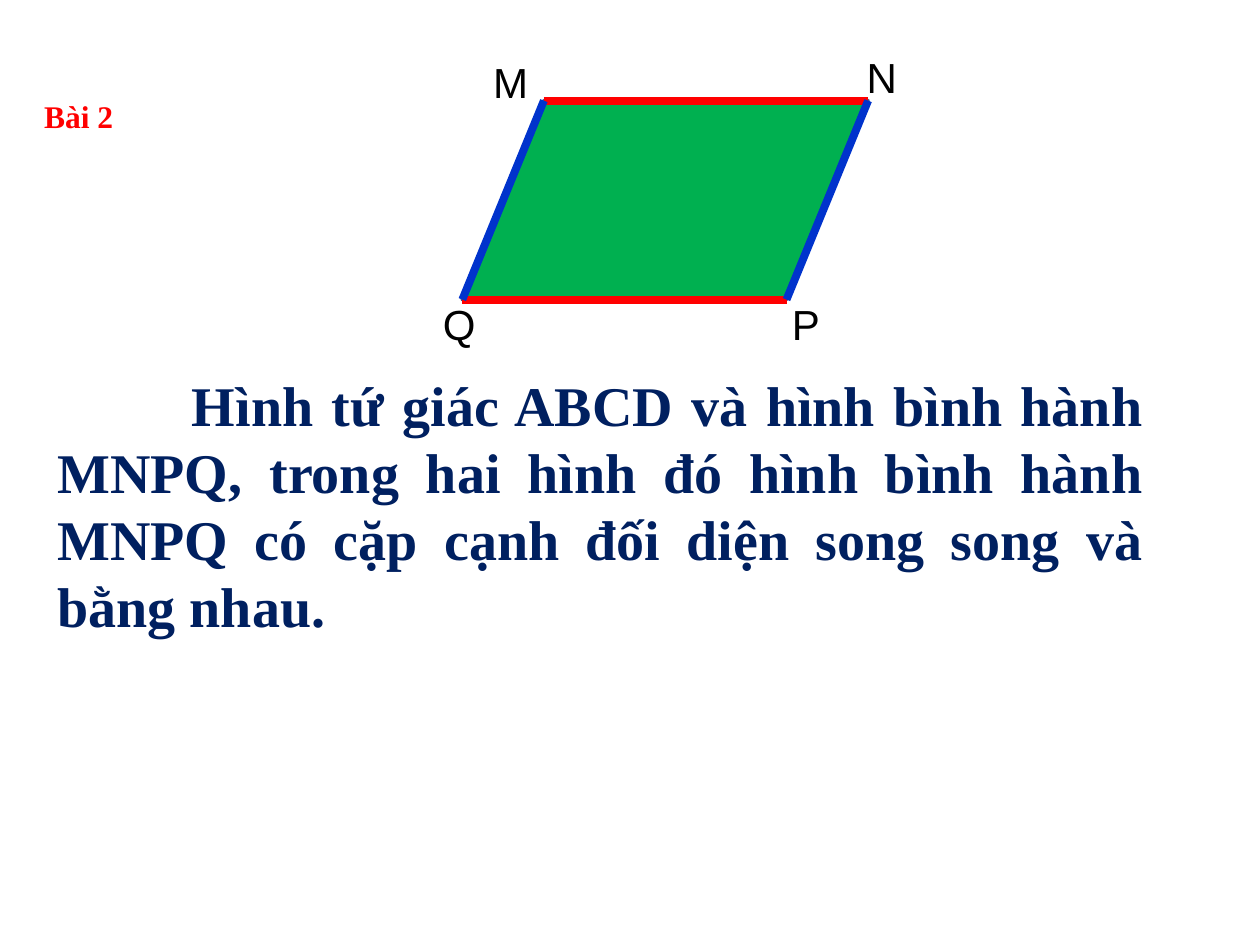
import pptx
import pptx.util
import pptx.dml.color
import pptx.enum.shapes
import pptx.enum.text
import pptx.oxml
from pptx.util import Cm, Pt

RGBColor = pptx.dml.color.RGBColor
RED = RGBColor(0xFF, 0x00, 0x00)
BLUE = RGBColor(0x00, 0x33, 0xCC)
GREEN = RGBColor(0x00, 0xB0, 0x50)
OUTLINE = RGBColor(0x3A, 0x5F, 0x8C)
NAVY = RGBColor(0x00, 0x20, 0x60)
BLACK = RGBColor(0x00, 0x00, 0x00)
SERIF = "Times New Roman"
JUSTIFY = pptx.enum.text.PP_ALIGN.JUSTIFY


def add_text(shapes, box, text, size, font, color, bold=False):
    sp = shapes.add_textbox(*box)
    tf = sp.text_frame
    tf.word_wrap = True
    p = tf.paragraphs[0]
    r = p.add_run()
    r.text = text
    r.font.size = Pt(size)
    r.font.name = font
    r.font.color.rgb = color
    r.font.bold = bold
    return p


def add_side(s, start, end, color):
    line = s.shapes.add_connector(
        pptx.enum.shapes.MSO_CONNECTOR.STRAIGHT, *start, *end)
    line.line.color.rgb = color
    line.line.width = Pt(4.5)
    line._element.spPr.append(
        pptx.oxml.parse_xml('<a:effectLst xmlns:a="http://schemas.openxmlformats.org/drawingml/2006/main"/>'))


def add_parallelogram(s, left, top, width, height):
    slant = 0.41
    group = s.shapes.add_group_shape()
    sp = group.shapes.add_shape(
        pptx.enum.shapes.MSO_SHAPE.PARALLELOGRAM, left, top, width, height)
    sp.adjustments[0] = slant
    sp.shadow.inherit = False
    sp.fill.solid()
    sp.fill.fore_color.rgb = GREEN
    sp.line.color.rgb = OUTLINE
    sp.line.width = Pt(2)

    shift = int(slant * height)
    right, bottom = left + width, top + height
    m, n = (left + shift, top), (right, top)
    q, p = (left, bottom), (right - shift, bottom)
    labels = [("M", m, -1.27, -1.02), ("N", n, -0.28, -1.12),
              ("P", p, -0.14, -0.15), ("Q", q, -0.64, -0.15)]
    for name, (x, y), dx, dy in labels:
        box = (x + Cm(dx), y + Cm(dy), Cm(1.27), Cm(1.27))
        add_text(group.shapes, box, name, 24, "Arial", BLACK)
    for start, end, color in [(m, n, RED), (q, p, RED), (m, q, BLUE), (n, p, BLUE)]:
        add_side(s, start, end, color)


def add_heading(s, *box):
    p = add_text(s.shapes, box, "Bài 2", 18, SERIF, RED, True)
    p.alignment = JUSTIFY
    p.line_spacing = Pt(48)


def add_answer(s, *box):
    text = ("Hình tứ giác ABCD và hình bình hành MNPQ, trong hai hình đó "
            "hình bình hành MNPQ có cặp cạnh đối diện song song và bằng nhau.")
    p = add_text(s.shapes, box, text, 32, SERIF, NAVY, True)
    p.alignment = JUSTIFY
    p._p.get_or_add_pPr().set("indent", str(Cm(2.71)))


def main():
    prs = pptx.Presentation()
    prs.slide_width, prs.slide_height = Cm(25.4), Cm(19.05)
    s = prs.slides.add_slide(prs.slide_layouts[6])
    add_answer(s, Cm(0.91), Cm(7.34), Cm(22.4), Cm(7.09))
    add_heading(s, Cm(0.64), Cm(0.91), Cm(2.62), Cm(1.7))
    add_parallelogram(s, Cm(9.32), Cm(2.03), Cm(8.18), Cm(4.01))
    prs.save("out.pptx")


if __name__ == "__main__":
    main()
